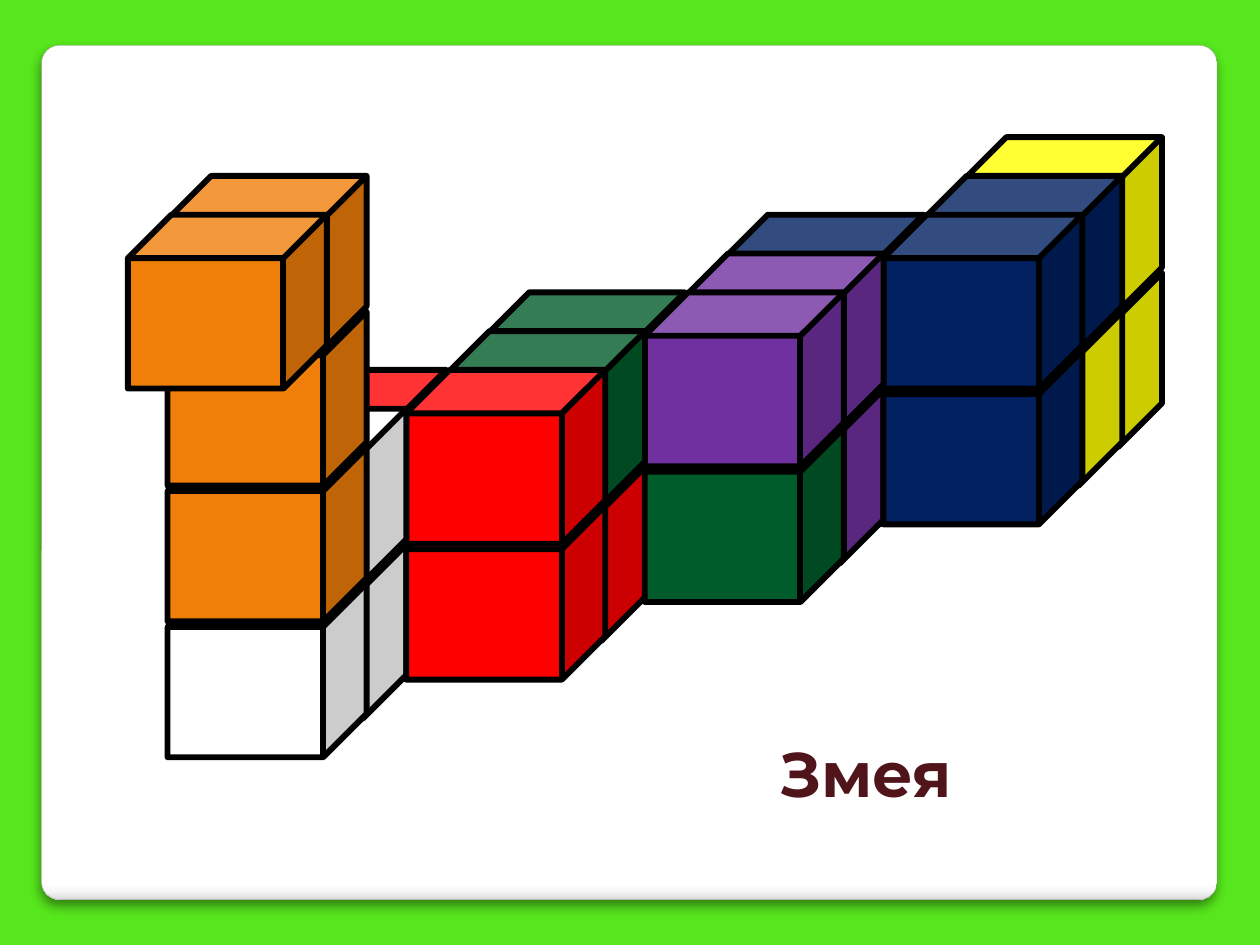
from lxml import etree
from pptx import Presentation
from pptx.dml.color import RGBColor
from pptx.enum.shapes import MSO_SHAPE
from pptx.enum.text import MSO_AUTO_SIZE
from pptx.oxml.ns import qn
from pptx.util import Inches, Pt

ROUNDED = MSO_SHAPE.ROUNDED_RECTANGLE
CUBE = MSO_SHAPE.CUBE
FIT_SHAPE = MSO_AUTO_SIZE.SHAPE_TO_FIT_TEXT

COLORS = {
    "background": "57E71D", "card_line": "A4A4A4", "outline": "000000",
    "title": "50141B", "white": "FFFFFF", "red": "FF0000",
    "yellow": "FFFF00", "green": "005C2A", "blue": "002060",
    "purple": "7030A0", "orange": "F07F09",
}
CARD_STOPS = [(0, "FFFFFF"), (98, "FFFFFF"), (99, "F7F7F7"), (100, "DADADA")]

# Cube lattice: every step is counted from the lowest front-left cube
ORIGIN_X, ORIGIN_Y = 1.33, 4.63
DEPTH_X, DEPTH_Y = 0.3156, 0.308
COLUMN = 4 * DEPTH_X
LEVEL = 3.5 * DEPTH_Y
CUBE_W, CUBE_H = 1.58, 1.38

# (column, depth, level, colour), from back to front
CUBES = [
    (0, 1, 0, "white"), (0, 2, 1, "red"), (1, 3, 0, "red"),
    (3, 8, 0, "yellow"), (3, 8, 1, "yellow"),
    (2, 6, 0, "green"), (2, 6, 1, "blue"), (2, 5, 0, "purple"),
    (3, 7, 0, "yellow"), (3, 7, 1, "blue"),
    (2, 4, 0, "green"), (1, 4, 1, "green"),
    (3, 6, 0, "blue"), (3, 6, 1, "blue"),
    (2, 5, 1, "purple"), (2, 4, 1, "purple"),
    (1, 3, 1, "green"), (1, 2, 0, "red"), (1, 2, 1, "red"),
    (0, 0, 0, "white"), (0, 1, 1, "white"),
    (0, 0, 1, "orange"), (0, 0, 2, "orange"), (0, 0, 3, "orange"),
    (0, -1, 3, "orange"),
]


def rgb(name):
    return RGBColor.from_string(COLORS[name])


def add_color(parent, value, alpha=None):
    clr = etree.SubElement(parent, qn("a:srgbClr"), val=value)
    if alpha is not None:
        etree.SubElement(clr, qn("a:alpha"), val=str(alpha * 1000))


def add_card(slide):
    sp = slide.shapes.add_shape(ROUNDED, Inches(0.33), Inches(0.36),
                                Inches(9.33), Inches(6.78))
    sp.adjustments[0] = 0.021
    sp.line.color.rgb = rgb("card_line")
    sp.line.width = Pt(0.16)

    # Top-to-bottom gradient that darkens at the lower edge
    sp.fill.gradient()
    sp.fill.gradient_angle = 270
    stops = sp.element.spPr.find(".//" + qn("a:gsLst"))
    for stop in list(stops):
        stops.remove(stop)
    for pos, value in CARD_STOPS:
        gs = etree.SubElement(stops, qn("a:gs"), pos=str(pos * 1000))
        add_color(gs, value)

    # Soft shadow below
    sp.shadow.inherit = False
    effects = sp.element.spPr.find(qn("a:effectLst"))
    shadow = etree.SubElement(effects, qn("a:outerShdw"),
                              blurRad=str(Pt(6)), dist=str(Pt(4)),
                              dir="5400000", algn="t", rotWithShape="0")
    add_color(shadow, "000000", alpha=44)


def add_cube(group, column, depth, level, color):
    x = ORIGIN_X + column * COLUMN + depth * DEPTH_X
    y = ORIGIN_Y - depth * DEPTH_Y - level * LEVEL
    sp = group.shapes.add_shape(CUBE, Inches(x), Inches(y),
                                Inches(CUBE_W), Inches(CUBE_H))
    sp.shadow.inherit = False
    sp.fill.solid()
    sp.fill.fore_color.rgb = rgb(color)
    sp.line.color.rgb = rgb("outline")
    sp.line.width = Pt(3.35)
    etree.SubElement(sp.element.spPr.find(qn("a:ln")), qn("a:round"))


def add_title(slide, text):
    box = slide.shapes.add_textbox(Inches(6.09), Inches(5.78),
                                   Inches(1.66), Inches(0.71))
    tf = box.text_frame
    tf.word_wrap = False
    tf.auto_size = FIT_SHAPE
    r = tf.paragraphs[0].add_run()
    r.text = text
    r.font.name = "Montserrat"
    r.font.size = Pt(36)
    r.font.bold = True
    r.font.color.rgb = rgb("title")


def main():
    prs = Presentation()
    prs.slide_width, prs.slide_height = Inches(10), Inches(7.5)
    slide = prs.slides.add_slide(prs.slide_layouts[6])

    # Background and card
    slide.background.fill.solid()
    slide.background.fill.fore_color.rgb = rgb("background")
    add_card(slide)

    # Snake of cubes
    snake = slide.shapes.add_group_shape()
    for cube in CUBES:
        add_cube(snake, *cube)

    add_title(slide, "Змея")
    prs.save("out.pptx")


if __name__ == "__main__":
    main()
